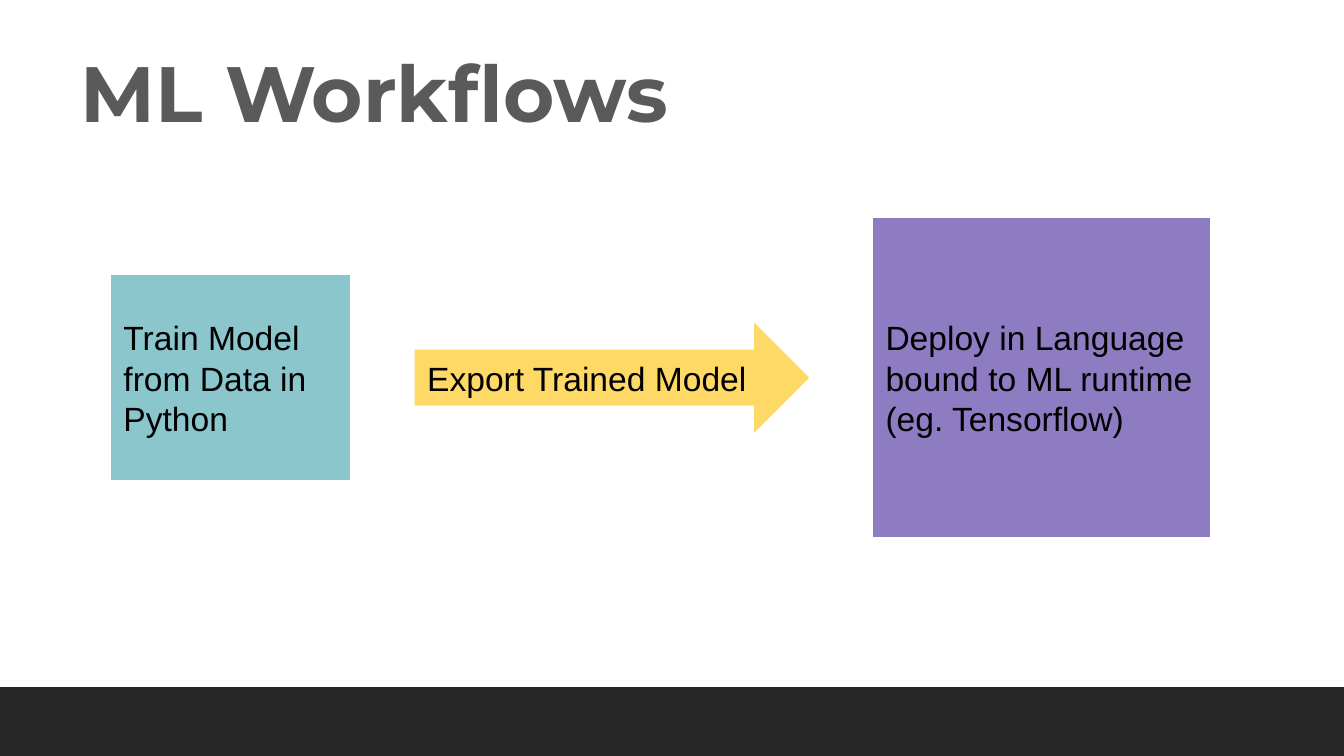
"""Build the ML Workflows slide: train, export and deploy."""
from pptx import Presentation
from pptx.dml.color import RGBColor
from pptx.enum.shapes import MSO_SHAPE
from pptx.enum.text import MSO_ANCHOR, PP_ALIGN
from pptx.util import Inches, Pt

RECT, ARROW = MSO_SHAPE.RECTANGLE, MSO_SHAPE.RIGHT_ARROW
TOP, MIDDLE, LEFT = MSO_ANCHOR.TOP, MSO_ANCHOR.MIDDLE, PP_ALIGN.LEFT
WHITE = RGBColor(0xFF, 0xFF, 0xFF)
BLACK = RGBColor(0x00, 0x00, 0x00)
GREY = RGBColor(0x5A, 0x5A, 0x59)
CHARCOAL = RGBColor(0x27, 0x27, 0x27)
TEAL = RGBColor(0x8A, 0xC6, 0xCC)
PURPLE = RGBColor(0x8E, 0x7C, 0xC3)
YELLOW = RGBColor(0xFF, 0xD9, 0x66)


def add_block(slide, kind, box, fill, line, weight):
    s = slide.shapes.add_shape(kind, *[Inches(v) for v in box])
    s.shadow.inherit = False
    s.fill.solid()
    s.fill.fore_color.rgb = fill
    s.line.color.rgb = line
    s.line.width = Pt(weight)
    return s


def set_text(s, text, anchor, color, font):
    tf = s.text_frame
    frame = {"word_wrap": True, "vertical_anchor": anchor}
    for side in ("left", "top", "right", "bottom"):
        frame[f"margin_{side}"] = Inches(0.1)
    for name, value in frame.items():
        setattr(tf, name, value)
    p = tf.paragraphs[0]
    p.alignment = LEFT
    r = p.add_run()
    r.text = text
    r.font.color.rgb = color
    for name, value in font.items():
        setattr(r.font, name, value)


prs = Presentation()
prs.slide_width = Inches(10)
prs.slide_height = Inches(10) * 9 // 16
slide = prs.slides.add_slide(prs.slide_layouts[5])
slide.background.fill.solid()
slide.background.fill.fore_color.rgb = WHITE

add_block(slide, RECT, (0, 5.12, 10.01, 0.51), CHARCOAL, CHARCOAL, 0.9)

title = slide.shapes.title
title.left, title.top = Inches(0.5), Inches(0.23)
title.width, title.height = Inches(9), Inches(0.94)
set_text(title, "ML Workflows", TOP, GREY,
         {"name": "Montserrat", "size": Pt(42), "bold": True})

MID_Y = 2.81
STEPS = [
    (RECT, 0.82, 1.79, 1.54, TEAL, "Train Model from Data in Python"),
    (RECT, 6.49, 2.52, 2.38, PURPLE,
     "Deploy in Language bound to ML runtime (eg. Tensorflow)"),
    (ARROW, 3.08, 2.95, 0.85, YELLOW, "Export Trained Model"),
]
for kind, left, width, height, fill, text in STEPS:
    box = (left, MID_Y - height / 2, width, height)
    s = add_block(slide, kind, box, fill, WHITE, 0.75)
    set_text(s, text, MIDDLE, BLACK, {"name": "Arial", "size": Pt(18)})

prs.save("out.pptx")
